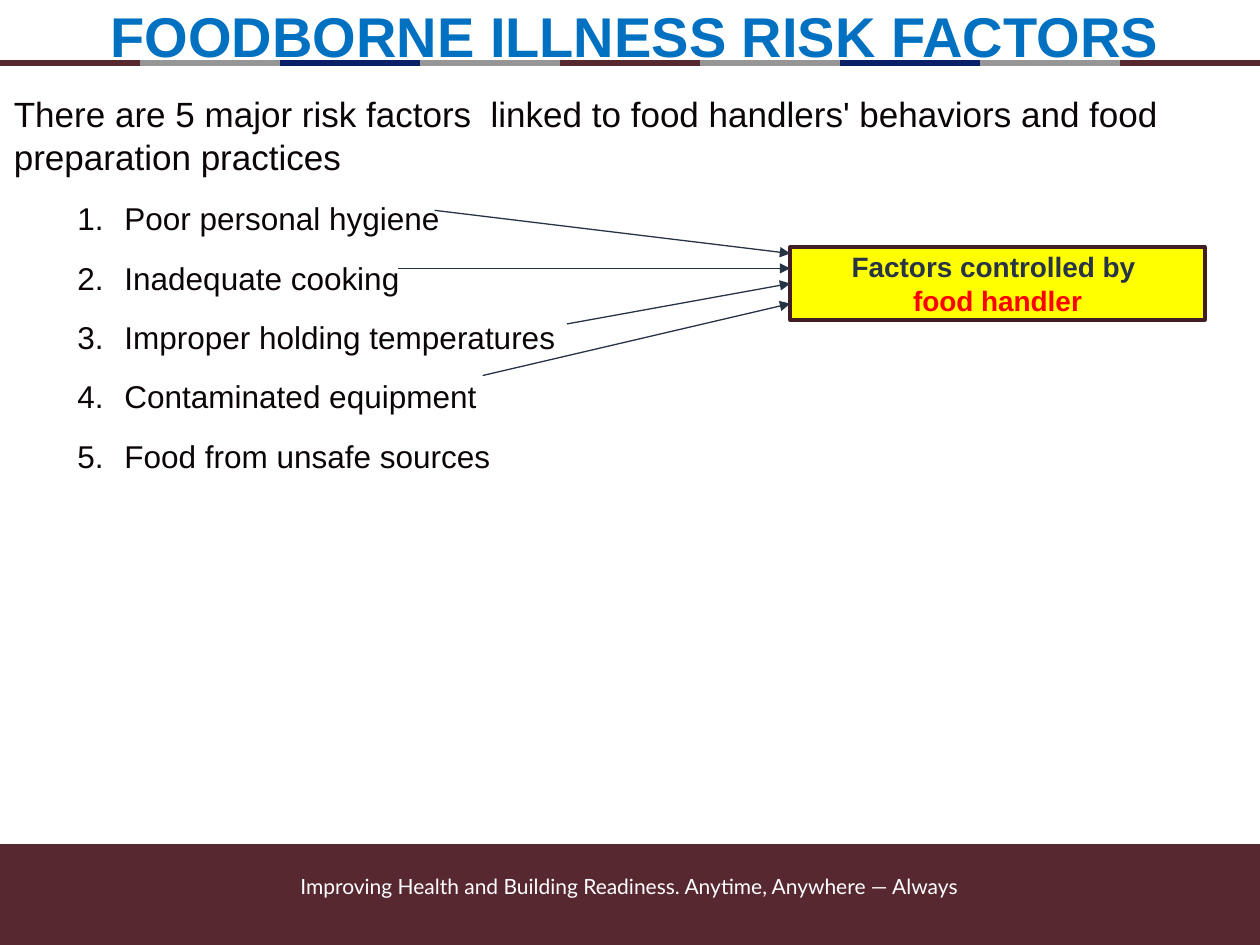
"""Build the slide on foodborne illness risk factors."""
from itertools import cycle, islice

from lxml.etree import SubElement
from pptx import Presentation
from pptx.dml.color import RGBColor
from pptx.enum.shapes import MSO_CONNECTOR as Link, MSO_SHAPE as Preset
from pptx.enum.text import MSO_ANCHOR as Anchor, PP_ALIGN as Align
from pptx.oxml.ns import qn
from pptx.util import Cm, Pt

COLORS = {
    "maroon": "582831", "gray": "969696", "navy": "092068", "white": "FFFFFF",
    "title": "0070C0", "body": "0B0506", "yellow": "FFFF00", "border": "411E24",
    "slate": "283446", "red": "FF0000", "arrow": "263345",
}
WIDTH, HEIGHT = 25.4, 19.05


class SlideBuilder:
    def __init__(self, slide, font="Arial"):
        self.slide = slide
        self.font = font

    def color(self, name):
        return RGBColor.from_string(COLORS[name])

    def rect(self, left, top, width, height, fill, border=None):
        shape = self.slide.shapes.add_shape(
            Preset.RECTANGLE, Cm(left), Cm(top), Cm(width), Cm(height))
        shape.shadow.inherit = False
        shape.fill.solid()
        shape.fill.fore_color.rgb = self.color(fill)
        if border:
            shape.line.color.rgb = self.color(border)
            shape.line.width = Pt(2)
        else:
            shape.line.fill.background()
        shape.text_frame.vertical_anchor = Anchor.MIDDLE
        return shape

    def frame(self, left, top, width, height):
        frame = self.slide.shapes.add_textbox(
            Cm(left), Cm(top), Cm(width), Cm(height)).text_frame
        frame.word_wrap = True
        return frame

    def paragraph(self, frame, text, size, color, bold=False, font=None,
                  align=Align.LEFT, spacing=None):
        first = frame.paragraphs[0]
        paragraph = frame.add_paragraph() if first.runs else first
        paragraph.alignment = align
        if spacing:
            paragraph.line_spacing = spacing
        run = paragraph.add_run()
        run.text = text
        run.font.name = font or self.font
        run.font.size = Pt(size)
        run.font.bold = bold
        run.font.color.rgb = self.color(color)
        return paragraph

    def numbered(self, frame, text, size, color, spacing):
        paragraph = self.paragraph(frame, text, size, color, spacing=spacing)
        paragraph.level = 1
        properties = paragraph._p.get_or_add_pPr()
        properties.set("marL", str(Cm(2.23)))
        properties.set("indent", str(Cm(-0.95)))
        SubElement(properties, qn("a:buAutoNum"), type="arabicPeriod")

    def line(self, start, end, color, width, arrow=False):
        line = self.slide.shapes.add_connector(
            Link.STRAIGHT, Cm(start[0]), Cm(start[1]), Cm(end[0]), Cm(end[1]))
        line.line.color.rgb = self.color(color)
        line.line.width = Pt(width)
        if arrow:
            SubElement(line.line._get_or_add_ln(), qn("a:tailEnd"), type="triangle")
        SubElement(line._element.spPr, qn("a:effectLst"))
        return line


def main():
    deck = Presentation()
    deck.slide_width, deck.slide_height = Cm(WIDTH), Cm(HEIGHT)
    builder = SlideBuilder(deck.slides.add_slide(deck.slide_layouts[6]))

    builder.rect(0, 17.02, WIDTH, HEIGHT - 17.02, "maroon")
    stripe_count = 9
    stripe = WIDTH / stripe_count
    stripe_colors = cycle(("maroon", "gray", "navy", "gray"))
    for index, color in enumerate(islice(stripe_colors, stripe_count)):
        builder.line((index * stripe, 1.27), ((index + 1) * stripe, 1.27), color, 4)

    motto = builder.frame(3.28, 17.48, 18.82, 1.22)
    builder.paragraph(
        motto, "Improving Health and Building Readiness. Anytime, Anywhere — Always",
        12, "white", font="Lato", align=Align.CENTER)

    title = builder.frame(1.9, -0.1, 21.8, 2.54)
    builder.paragraph(title, "FOODBORNE ILLNESS RISK FACTORS", 32, "title",
                      bold=True, align=Align.CENTER)

    factors = builder.frame(0.03, 1.7, 25.2, 9.55)
    builder.paragraph(
        factors, "There are 5 major risk factors  linked to food handlers' "
        "behaviors and food preparation practices", 20, "body", spacing=1.04)
    for factor in ("Poor personal hygiene", "Inadequate cooking",
                   "Improper holding temperatures", "Contaminated equipment",
                   "Food from unsafe sources"):
        builder.numbered(factors, factor, 18, "body", spacing=1.57)

    box_left, box_top, box_height = 15.93, 4.98, 1.47
    box_middle = box_top + box_height / 2
    handler = builder.rect(box_left, box_top, 8.36, box_height, "yellow", "border")
    for text, color in (("Factors controlled by ", "slate"), ("food handler", "red")):
        builder.paragraph(handler.text_frame, text, 16, color, bold=True,
                          align=Align.CENTER)

    for start, end_y in (((8.76, 4.24), 5.11), ((8.03, 5.41), 5.41),
                         ((11.43, 6.53), box_middle), ((9.73, 7.57), 6.12)):
        arrow = builder.line(start, (box_left, end_y), "arrow", 0.75, arrow=True)
        if end_y == box_middle:
            arrow.end_connect(handler, 1)

    deck.save("out.pptx")


if __name__ == "__main__":
    main()
